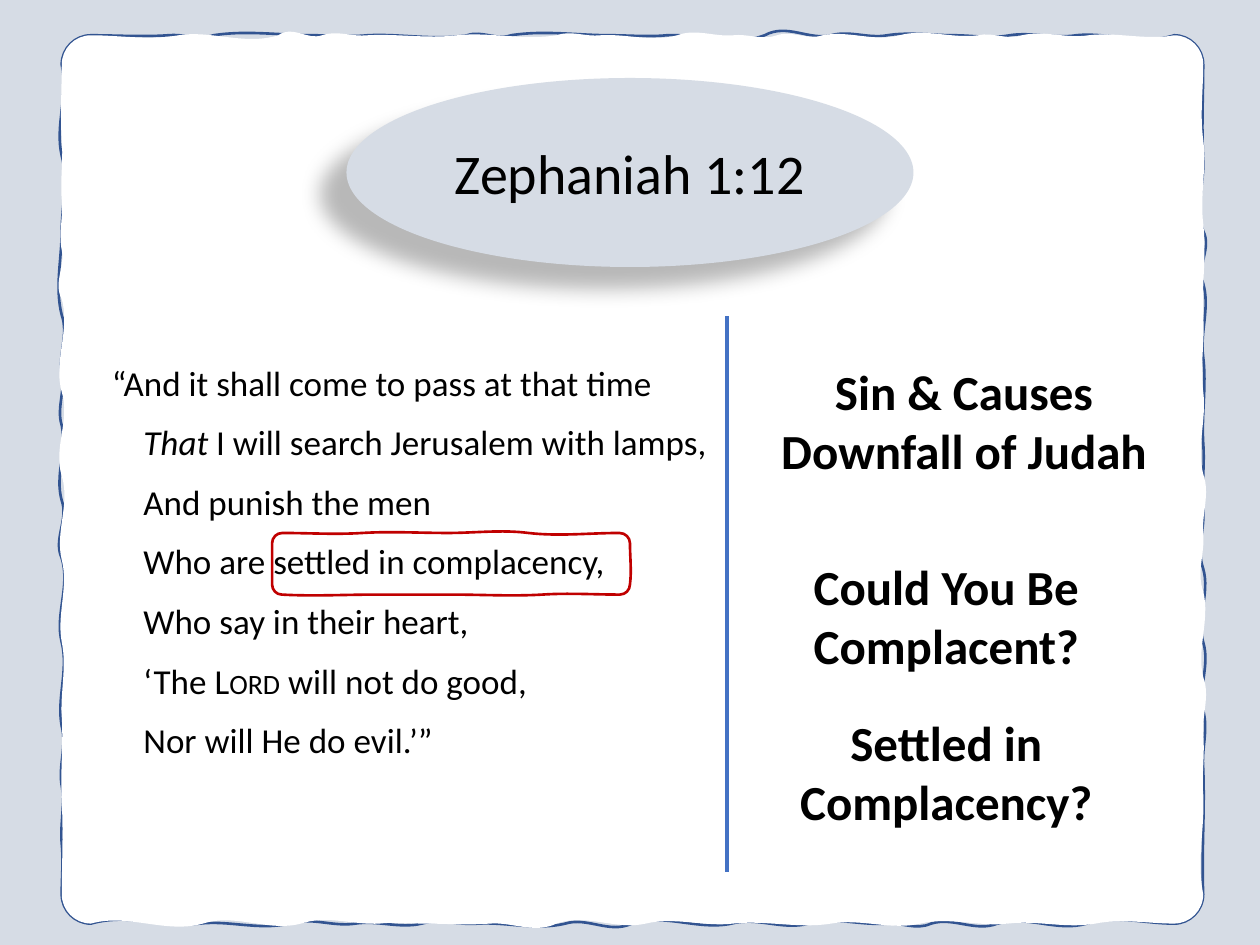
from lxml import etree
from pptx import Presentation
from pptx.dml.color import RGBColor
from pptx.enum.shapes import MSO_CONNECTOR, MSO_SHAPE
from pptx.enum.text import MSO_ANCHOR as Anchor, PP_ALIGN as Align
from pptx.oxml import parse_xml
from pptx.oxml.ns import nsdecls, qn
from pptx.util import Pt

COLORS = {"mist": "D6DCE5", "paper": "FFFFFF", "edge": "325491",
          "ink": "000000", "mark": "C00000", "divider": "4472C4"}
FONT = "Calibri"
TITLE = "Zephaniah 1:12"
VERSE = [
    [("“And it shall come to pass at that time", "")],
    [("That", "italic"), (" I will search Jerusalem with lamps,", "")],
    [("And punish the men", "")],
    [("Who are settled in complacency,", "")],
    [("Who say in their heart,", "")],
    [("‘The ", ""), ("Lord", "small"), (" will not do good,", "")],
    [("Nor will He do evil.’”", "")],
]
HEADINGS = [
    ((429.1, 203, 243.4, 75), [("Sin & Causes", 0), ("Downfall of Judah", 0)]),
    ((419, 314.6, 243.4, 167), [("Could You Be", 0), ("Complacent?", 0),
                                ("Settled in Complacency?", 22)]),
]

# Each side lists (position along the side, wobble) clockwise from the top.
FRAME_BOX = (35.3, 20.2, 687.6, 527.8)
FRAME_EDGE = {
    "top": [(96, 1), (122, 3), (179, 0), (210, 1), (267, 3), (292, 3), (349, 0), (381, 1),
            (437, 7), (475, 3), (507, 2), (545, 0), (577, 2), (615, 2), (671, 6)],
    "right": [(90, -1), (132, -5), (162, -4), (204, -2), (253, -1), (291, -1), (325, -4),
              (367, -4), (406, -3), (439, -1), (511, -1)],
    "bottom": [(621, -5), (570, -5), (532, -4), (506, -1), (462, -4), (418, -4), (361, -6),
               (323, -4), (273, -1), (241, -3), (203, -2), (165, -4), (114, -2), (52, -6)],
    "left": [(482, 1), (449, 2), (415, 3), (367, 4), (319, 5), (286, 4), (243, 3),
             (214, 2), (180, 4), (132, 0), (89, 4), (37, 4)],
}
FRAME_PAPER = {
    "top": [(102, 3), (159, 6), (184, 3), (210, 1), (261, 2), (318, 3), (343, 1), (387, 4),
            (419, 1), (444, 3), (470, 3), (514, 4), (559, 2), (584, 3), (622, 2), (671, 3)],
    "right": [(80, -2), (128, -2), (181, -1), (224, -2), (271, -4), (305, -1), (338, -4),
              (387, -4), (420, -1), (454, -1), (511, -4)],
    "bottom": [(626, -3), (576, -2), (526, -4), (475, -3), (419, -2), (369, -4), (318, -6),
               (280, -1), (242, 0), (217, -1), (172, -5), (116, -6), (52, -6)],
    "left": [(459, 1), (410, 1), (367, 3), (320, 4), (272, 5), (224, 5), (171, 5),
             (143, 2), (114, 1), (80, 1), (37, 0)],
}
MARK_BOX = (155.5, 304.6, 360, 339.8)
MARK_EDGE = {
    "top": [(207, 1), (256, 0), (302, -2), (354, 0)],
    "right": [(334, 1)],
    "bottom": [(310, -1), (258, 0), (215, 0), (161, 1)],
    "left": [(310, 0)],
}


def color(name):
    return RGBColor.from_string(COLORS[name])


def wavy_outline(box, sides, radius):
    left, top, right, bottom = box
    levels = {"top": top, "right": right, "bottom": bottom, "left": left}
    starts = {"top": left + radius, "right": top + radius,
              "bottom": right - radius, "left": bottom - radius}
    corners = {"top": (left, top), "right": (right, top),
               "bottom": (right, bottom), "left": (left, bottom)}
    outline = [(left, top + radius)]
    for side, nodes in sides.items():
        level, position, wobble = levels[side], starts[side], 0
        place = ((lambda along, across: (along, across)) if side in ("top", "bottom")
                 else (lambda along, across: (across, along)))
        origin, target, corner = outline[-1], place(position, level), corners[side]
        outline += [tuple(a + (c - a) * 0.55 for a, c in zip(point, corner))
                    for point in (origin, target)]
        outline.append(target)
        for end, next_wobble in nodes:
            third = (end - position) / 3
            outline += [place(position + third, level - wobble),
                        place(end - third, level + next_wobble), place(end, level)]
            position, wobble = end, next_wobble
    return [(Pt(x), Pt(y)) for x, y in outline]


def bend_segments(shape):
    segments = list(shape._element.spPr.iter(qn("a:lnTo")))
    for first, second, third in zip(segments[::3], segments[1::3], segments[2::3]):
        first.tag = qn("a:cubicBezTo")
        for segment in (second, third):
            first.append(segment[0])
            segment.getparent().remove(segment)


def add_wavy(slide, box, sides, radius, fill=None, line=None):
    points = wavy_outline(box, sides, radius)
    builder = slide.shapes.build_freeform(*points[0], scale=1.0)
    builder.add_line_segments(points[1:], close=True)
    shape = builder.convert_to_shape()
    bend_segments(shape)
    shape.shadow.inherit = False
    for style, name in ((shape.fill, fill), (shape.line.fill, line)):
        if name:
            style.solid()
            style.fore_color.rgb = color(name)
        else:
            style.background()
    if line:
        shape.line.width = Pt(1.5)


def set_font(paragraph, size, bold=False):
    font = paragraph.font
    font.name, font.size, font.bold = FONT, Pt(size), bold
    font.color.rgb = color("ink")


def add_text_frame(slide, box):
    frame = slide.shapes.add_textbox(*map(Pt, box)).text_frame
    frame.word_wrap = True
    return frame


def next_paragraph(frame, index):
    return frame.add_paragraph() if index else frame.paragraphs[0]


def add_verse(slide):
    frame = add_text_frame(slide, (56.9, 203, 371.5, 237.6))
    for index, runs in enumerate(VERSE):
        paragraph = next_paragraph(frame, index)
        properties = paragraph._p.get_or_add_pPr()
        properties.set("marL", str(Pt(36)))
        properties.set("indent", str(Pt(-18 if index else -36)))
        paragraph.space_after = Pt(10)
        set_font(paragraph, 20)
        for text, style in runs:
            run = paragraph.add_run()
            run.text = text
            if style == "italic":
                run.font.italic = True
            elif style == "small":
                run.font._element.set("cap", "small")


def add_title(slide):
    oval = slide.shapes.add_shape(MSO_SHAPE.OVAL, *map(Pt, (198, 44.6, 324, 108)))
    oval.fill.solid()
    oval.fill.fore_color.rgb = color("mist")
    oval.line.fill.background()
    oval._element.spPr.append(parse_xml(
        f'<a:effectLst {nsdecls("a")}><a:outerShdw blurRad="{Pt(11.8)}" dist="{Pt(19.7)}" '
        f'dir="8460000" algn="ctr" rotWithShape="0"><a:srgbClr val="{COLORS["ink"]}">'
        '<a:alpha val="28000"/></a:srgbClr></a:outerShdw></a:effectLst>'))
    frame = oval.text_frame
    frame.vertical_anchor = Anchor.MIDDLE
    paragraph = frame.paragraphs[0]
    paragraph.text, paragraph.alignment = TITLE, Align.CENTER
    set_font(paragraph, 32)


def add_heading(slide, box, lines):
    frame = add_text_frame(slide, box)
    for index, (text, gap) in enumerate(lines):
        paragraph = next_paragraph(frame, index)
        paragraph.text, paragraph.alignment = text, Align.CENTER
        paragraph.space_before = Pt(gap)
        set_font(paragraph, 28, bold=True)


def add_divider(slide):
    divider = slide.shapes.add_connector(MSO_CONNECTOR.STRAIGHT,
                                         *map(Pt, (415.5, 180.7, 415.5, 498.2)))
    divider.line.color.rgb = color("divider")
    divider.line.width = Pt(2.25)
    etree.SubElement(divider._element.spPr, qn("a:effectLst"))


def main():
    presentation = Presentation()
    presentation.slide_width, presentation.slide_height = Pt(720), Pt(540)
    slide = presentation.slides.add_slide(presentation.slide_layouts[6])
    slide.background.fill.solid()
    slide.background.fill.fore_color.rgb = color("mist")
    add_wavy(slide, FRAME_BOX, FRAME_EDGE, 16.7, line="edge")
    add_wavy(slide, FRAME_BOX, FRAME_PAPER, 16.7, fill="paper")
    add_verse(slide)
    add_title(slide)
    add_wavy(slide, MARK_BOX, MARK_EDGE, 5.8, line="mark")
    for box, lines in HEADINGS:
        add_heading(slide, box, lines)
    add_divider(slide)
    presentation.save("out.pptx")


if __name__ == "__main__":
    main()
